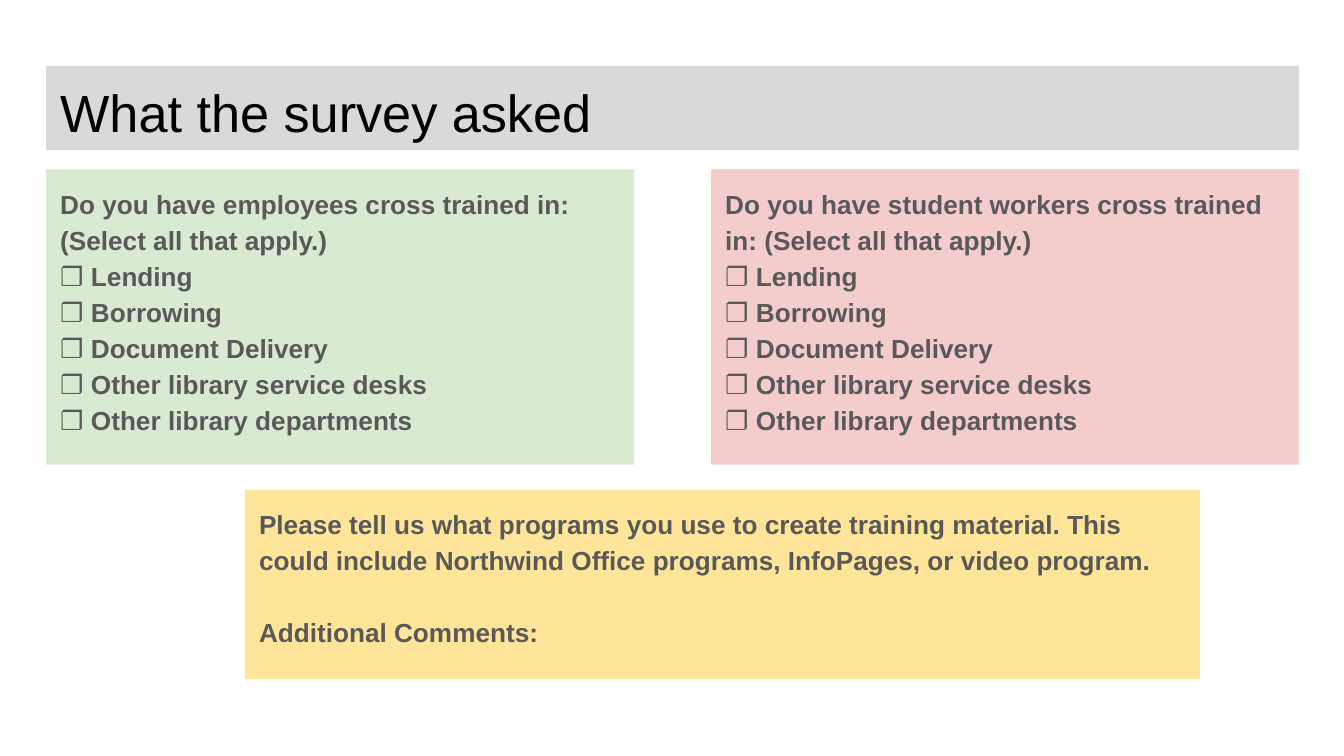
from pptx import Presentation
from pptx.dml.color import RGBColor
from pptx.enum.shapes import MSO_SHAPE
from pptx.enum.text import MSO_ANCHOR, MSO_AUTO_SIZE, PP_ALIGN
from pptx.util import Pt
from lxml.etree import SubElement
from pptx.oxml.ns import qn

PX = 9525
PAD = 10
HUES = {
    "band": "D9D9D9", "staff": "D9EAD3", "student": "F4CCCC",
    "notes": "FFE599", "title": "000000", "text": "595959",
}
AREAS = ["Lending", "Borrowing", "Document Delivery",
         "Other library service desks", "Other library departments"]


def place(shape, box, hue):
    shape.left, shape.top, shape.width, shape.height = (n * PX for n in box)
    shape.fill.solid()
    shape.fill.fore_color.rgb = RGBColor.from_string(HUES[hue])
    shape.line.fill.background()
    frame = shape.text_frame
    frame.word_wrap = True
    frame.auto_size = MSO_AUTO_SIZE.NONE
    frame.vertical_anchor = MSO_ANCHOR.TOP
    frame.margin_left = frame.margin_right = PAD * PX
    frame.margin_top = frame.margin_bottom = PAD * PX
    return frame


def write(frame, lines, size, hue, bold=False, space=1.0, gap=0):
    frame.text = "\n".join(lines)
    for spot, para in enumerate(frame.paragraphs):
        para.alignment = PP_ALIGN.LEFT
        para.line_spacing = space
        para.space_before = Pt(gap if spot else 0)
        para.space_after = Pt(0)
        para.font.name = "Arial"
        para.font.size = Pt(size)
        para.font.bold = bold
        para.font.color.rgb = RGBColor.from_string(HUES[hue])


def header(shape, box, text):
    write(place(shape, box, "band"), [text], 28, "title")


def question(shape, box, hue, group):
    ask = f"Do you have {group} cross trained in: (Select all that apply.)"
    frame = place(shape, box, hue)
    write(frame, [ask] + [f"❐ {area}" for area in AREAS], 14, "text", True, 1.15)
    for para in frame.paragraphs:
        props = para._p.get_or_add_pPr()
        props.set("marL", "0")
        props.set("indent", "0")
        SubElement(props, qn("a:buNone"))
        for rest in props.findall(qn("a:defRPr")):
            props.append(rest)


def comments(slide, box):
    shape = slide.shapes.add_shape(MSO_SHAPE.RECTANGLE, 0, 0, PX, PX)
    shape.shadow.inherit = False
    lines = ["Please tell us what programs you use to create training material. "
             "This could include Northwind Office programs, InfoPages, or video program.",
             "Additional Comments:"]
    write(place(shape, box, "notes"), lines, 14, "text", True, 1.15, 19)


def main():
    deck = Presentation()
    deck.slide_width, deck.slide_height = 960 * PX, 540 * PX
    slide = deck.slides.add_slide(deck.slide_layouts[3])
    title, left, right = list(slide.placeholders)[:3]
    edge, full, card = 33, 895, 420
    header(title, (edge, 47, full, 60), "What the survey asked")
    question(left, (edge, 121, card, 211), "staff", "employees")
    question(right, (edge + full - card, 121, card, 211), "student", "student workers")
    comments(slide, (175, 350, 682, 135))
    deck.save("out.pptx")


if __name__ == "__main__":
    main()
